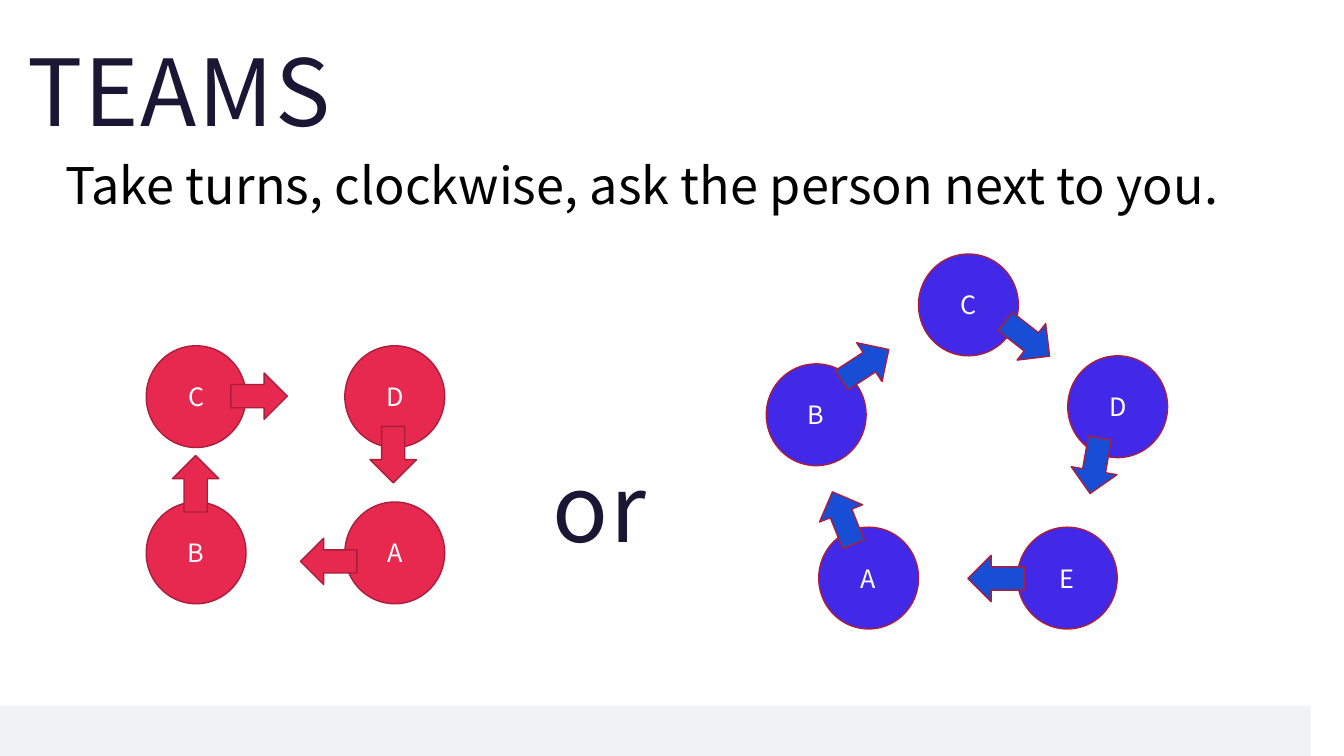
import pptx
import pptx.dml.color
import pptx.enum.shapes
import pptx.enum.text
import pptx.util

Inches = pptx.util.Inches
Shape = pptx.enum.shapes.MSO_SHAPE
Anchor = pptx.enum.text.MSO_ANCHOR
Align = pptx.enum.text.PP_ALIGN

WIDTH, HEIGHT = 13.33, 7.5
RED, VIOLET, BLUE = "E72950", "4129E7", "174ED5"


def color(value):
    return pptx.dml.color.RGBColor.from_string(value)


class TeamSlide:
    """Draws the elements of the slide in one shared style."""

    font = "Noto Sans CJK JP"
    outline = "AB1E3B"

    def __init__(self, page):
        self.page = page

    def add_text(self, paragraph, text, size, ink):
        span = paragraph.add_run()
        span.text = text
        paragraph.font.name = self.font
        paragraph.font.size = pptx.util.Pt(size)
        paragraph.font.color.rgb = color(ink)
        return span

    def border(self, left, top, right, bottom):
        builder = self.page.shapes.build_freeform(0, 0, scale=Inches(1))
        builder.add_line_segments([(WIDTH, 0), (WIDTH, HEIGHT), (0, HEIGHT)])
        builder.move_to(left, top)
        builder.add_line_segments([(left, bottom), (right, bottom), (right, top)])
        frame = builder.convert_to_shape()
        frame.shadow.inherit = False
        frame.fill.solid()
        frame.fill.fore_color.rgb = color("F0F3F3")
        frame.line.fill.background()

    def textbox(self, left, top, width, height):
        box = self.page.shapes.add_textbox(
            Inches(left), Inches(top), Inches(width), Inches(height))
        return box.text_frame

    def heading(self, text, left, top, width):
        frame = self.textbox(left, top, width, 1.41)
        frame.word_wrap = True
        frame.vertical_anchor = Anchor.BOTTOM
        frame.margin_left = frame.margin_right = frame.margin_top = Inches(0.12)
        frame.margin_bottom = Inches(0.1)
        para = frame.paragraphs[0]
        para.line_spacing = 1.13
        span = self.add_text(para, text, 66, "1A1634")
        span.font._element.set("spc", "140")

    def instruction(self, text, left, top, width, height):
        frame = self.textbox(left, top, width, height)
        frame.word_wrap = False
        frame.auto_size = pptx.enum.text.MSO_AUTO_SIZE.SHAPE_TO_FIT_TEXT
        self.add_text(frame.paragraphs[0], text, 36, "000000")

    def shape(self, kind, left, top, width, height, fill):
        shape = self.page.shapes.add_shape(
            kind, Inches(left), Inches(top), Inches(width), Inches(height))
        shape.shadow.inherit = False
        shape.fill.solid()
        shape.fill.fore_color.rgb = color(fill)
        shape.line.color.rgb = color(self.outline)
        shape.line.width = pptx.util.Pt(1)
        return shape

    def player(self, name, left, top, fill):
        circle = self.shape(Shape.OVAL, left, top, 0.99, 1.01, fill)
        circle.text_frame.vertical_anchor = Anchor.MIDDLE
        para = circle.text_frame.paragraphs[0]
        para.alignment = Align.CENTER
        self.add_text(para, name, 18, "FFFFFF")

    def arrow(self, left, top, angle, fill):
        arrow = self.shape(Shape.LEFT_ARROW, left, top, 0.56, 0.46, fill)
        arrow.rotation = angle


def main():
    deck = pptx.Presentation()
    deck.slide_width, deck.slide_height = Inches(WIDTH), Inches(HEIGHT)
    slide = TeamSlide(deck.slides.add_slide(deck.slide_layouts[6]))

    slide.border(0.18, 0.17, 13.16, 7.33)
    slide.heading("TEAMS", 0.15, 0.13, 4.28)

    team_of_four = [("B", 1.45, 4.98), ("A", 3.42, 4.98),
                    ("D", 3.42, 3.43), ("C", 1.45, 3.43)]
    team_of_five = [("C", 9.11, 2.52), ("D", 10.59, 3.53), ("B", 7.6, 3.61),
                    ("A", 8.12, 5.23), ("E", 10.09, 5.23)]
    for team, fill in ((team_of_four, RED), (team_of_five, VIOLET)):
        for name, left, top in team:
            slide.player(name, left, top, fill)

    slide.heading("or", 5.36, 4.26, 1.65)

    turns_of_four = [(2.98, 5.34, 0), (1.66, 4.57, 90),
                     (2.29, 3.7, 180), (3.62, 4.28, 270)]
    turns_of_five = [(9.91, 3.13, 218), (10.58, 4.39, 280), (9.6, 5.51, 0),
                     (8.08, 4.91, 68.2), (8.3, 3.39, 146.9)]
    for turns, fill in ((turns_of_four, RED), (turns_of_five, BLUE)):
        for left, top, angle in turns:
            slide.arrow(left, top, angle, fill)

    slide.instruction("Take turns, clockwise, ask the person next to you.",
                      0.55, 1.48, 11.81, 0.71)
    deck.save("out.pptx")


if __name__ == "__main__":
    main()
